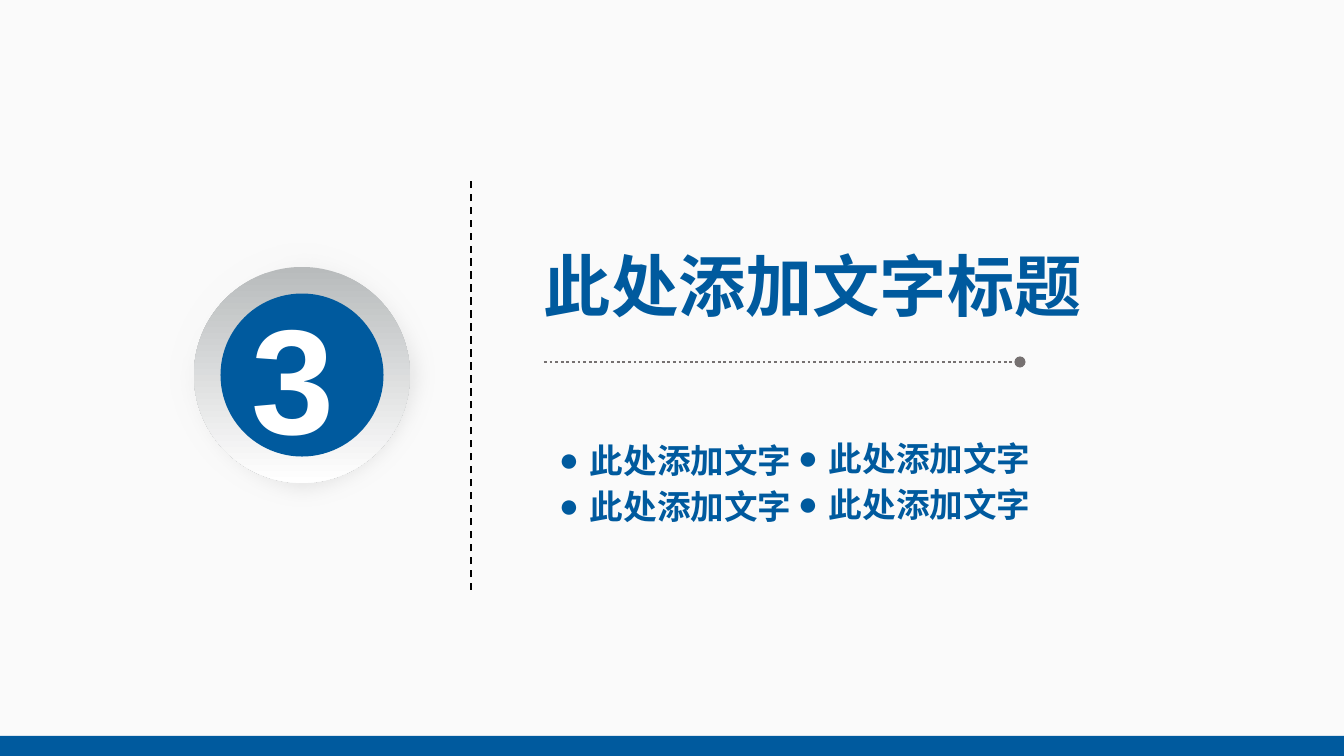
"""Build a section slide with a numbered badge, a title and four bullet points."""
import pptx
import pptx.dml.color
import pptx.enum.dml
import pptx.enum.shapes
import pptx.enum.text
import pptx.oxml
import pptx.oxml.ns
import pptx.util

SCALE = 914400 / 134.4
SLIDE = (1344, 756)
COLORS = {
    "blue": "005A9E", "white": "FFFFFF", "black": "000000", "gray": "767171",
    "shade": "D9D9D9", "silver": "B8BBBC", "top": "FAFAFA", "bottom": "FCFCFC",
}
NUMBER = "3"
TITLE = "此处添加文字标题"
COLUMNS = [
    (550, 435, ["此处添加文字", "此处添加文字"]),
    (789, 433, ["此处添加文字", "此处添加文字"]),
]
ROW_STEP = 46
BULLET_INDENT = 31
BADGE_CENTER = (302, 375)
BADGE = [
    ("OVAL", 270, ("shade", "white")),
    ("ROUNDED_RECTANGLE", 216, ("silver", "white")),
    ("OVAL", 163, ("blue",)),
]
RULES = [
    ((544, 362), (1020, 362), "gray", 1.5, "ROUND_DOT", "oval"),
    ((471, 590), (471, 178), "black", 1, "DASH", None),
]
FOOTER = (0, 736, 1344, 20)


def px(value):
    return pptx.util.Emu(round(value * SCALE))


def rgb(name):
    return pptx.dml.color.RGBColor.from_string(COLORS[name])


def add_xml(parent, markup):
    namespace = pptx.oxml.ns.nsdecls("a")
    tag, rest = markup[:-1].split(" ", 1) if " " in markup else (markup[:-2], "/")
    element = pptx.oxml.parse_xml(f"{tag} {namespace} {rest}>")
    parent.append(element)
    return element


def paint(fill, names):
    if len(names) == 1:
        fill.solid()
        fill.fore_color.rgb = rgb(names[0])
        return
    fill.gradient()
    fill.gradient_angle = 270
    for stop, name, position in zip(fill.gradient_stops, names, (0, 1)):
        stop.color.rgb = rgb(name)
        stop.position = position


def add_block(slide, preset, box, names):
    kind = getattr(pptx.enum.shapes.MSO_SHAPE, preset)
    block = slide.shapes.add_shape(kind, *map(px, box))
    block.shadow.inherit = False
    block.line.fill.background()
    paint(block.fill, names)
    return block


def add_rule(slide, start, end, color, width, dash, tail):
    straight = pptx.enum.shapes.MSO_CONNECTOR.STRAIGHT
    rule = slide.shapes.add_connector(straight, *map(px, start + end))
    rule.line.color.rgb = rgb(color)
    rule.line.width = pptx.util.Pt(width)
    rule.line.dash_style = getattr(pptx.enum.dml.MSO_LINE, dash)
    if tail:
        add_xml(rule.line._get_or_add_ln(), f'<a:tailEnd type="{tail}"/>')
    add_xml(rule._element.spPr, "<a:effectLst/>")


def add_text(slide, box, words, size, color, margins=(9, 5), wrap=False, bullet=None):
    frame = slide.shapes.add_textbox(*map(px, box)).text_frame
    side, edge = map(px, margins)
    layout = {
        "margin_left": side, "margin_right": side,
        "margin_top": edge, "margin_bottom": edge,
        "word_wrap": wrap,
        "auto_size": pptx.enum.text.MSO_AUTO_SIZE.SHAPE_TO_FIT_TEXT,
    }
    for name, value in layout.items():
        setattr(frame, name, value)
    paragraph = frame.paragraphs[0]
    if bullet:
        properties = paragraph._p.get_or_add_pPr()
        properties.set("marL", str(px(BULLET_INDENT)))
        properties.set("indent", str(-px(BULLET_INDENT)))
        add_xml(properties, '<a:buFont typeface="Arial"/>')
        add_xml(properties, f'<a:buChar char="{bullet}"/>')
    run = paragraph.add_run()
    run.text = words
    style = {"size": pptx.util.Pt(size), "name": "Arial", "bold": True}
    for name, value in style.items():
        setattr(run.font, name, value)
    run.font.color.rgb = rgb(color)


def add_badge(slide):
    center_x, center_y = BADGE_CENTER
    halo, ring, _ = [
        add_block(slide, preset, (center_x - size / 2, center_y - size / 2, size, size), names)
        for preset, size, names in BADGE
    ]
    ring.adjustments[0] = 0.5
    gradient = halo._element.spPr.find(pptx.oxml.ns.qn("a:gradFill"))
    gradient.remove(gradient.find(pptx.oxml.ns.qn("a:lin")))
    path = add_xml(gradient, '<a:path path="circle"/>')
    add_xml(path, '<a:fillToRect l="100000" t="100000"/>')
    effects = halo._element.spPr.find(pptx.oxml.ns.qn("a:effectLst"))
    add_xml(effects, f'<a:softEdge rad="{px(20)}"/>')


def main():
    deck = pptx.Presentation()
    deck.slide_width, deck.slide_height = map(px, SLIDE)
    slide = deck.slides.add_slide(deck.slide_layouts[6])
    paint(slide.background.fill, ("top", "bottom"))
    add_badge(slide)
    for rule in RULES:
        add_rule(slide, *rule)
    add_block(slide, "RECTANGLE", FOOTER, ("blue",))
    add_text(slide, (535, 239, 563, 91), TITLE, 36, "blue")
    add_text(slide, (239, 278, 94, 195), NUMBER, 80, "white", (13, 7), True)
    for left, top, points in COLUMNS:
        for row, point in enumerate(points):
            box = (left, top + row * ROW_STEP, 255, 51)
            add_text(slide, box, point, 18, "blue", bullet="●")
    deck.save("out.pptx")


if __name__ == "__main__":
    main()
